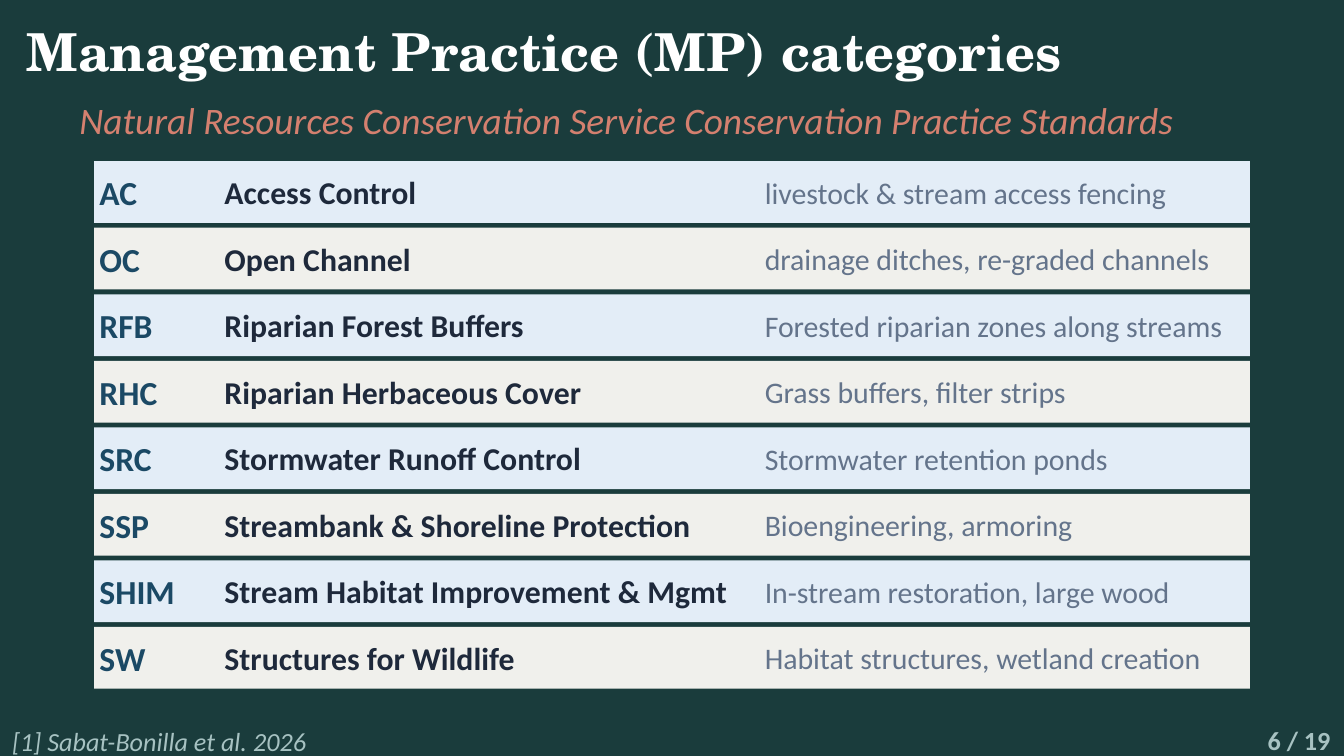
"""Build the slide that lists the management practice categories."""
from typing import NamedTuple

from pptx import Presentation
from pptx.dml.color import RGBColor
from pptx.enum.shapes import MSO_SHAPE
from pptx.enum.text import MSO_ANCHOR, PP_ALIGN
from pptx.util import Pt

RECTANGLE = MSO_SHAPE.RECTANGLE
MIDDLE = MSO_ANCHOR.MIDDLE
LEFT, RIGHT = PP_ALIGN.LEFT, PP_ALIGN.RIGHT

EMU_PER_PX = 4572
SLIDE_WIDTH, SLIDE_HEIGHT = 2000, 1125
ROW_LEFT, ROW_TOP, ROW_WIDTH, ROW_HEIGHT, ROW_PITCH = 140, 240, 1720, 92, 99

COLORS = {
    "background": "1A3C3C",
    "title": "FFFFFF",
    "subtitle": "D4806F",
    "footer": "A7C2C2",
    "row_blue": "E3EDF7",
    "row_grey": "F0F0EC",
    "code": "1B4965",
    "name": "1E293B",
    "example": "64748B",
}


class Box(NamedTuple):
    left: int
    top: int
    width: int
    height: int


class Column(NamedTuple):
    left: int
    width: int
    size: int
    color: str
    bold: bool


class Category(NamedTuple):
    code: str
    name: str
    example: str


COLUMNS = [
    Column(148, 164, 18, "code", True),
    Column(334, 784, 17, "name", True),
    Column(1138, 722, 16, "example", False),
]

CATEGORIES = [
    Category("AC", "Access Control", "livestock & stream access fencing"),
    Category("OC", "Open Channel", "drainage ditches, re-graded channels"),
    Category("RFB", "Riparian Forest Buffers", "Forested riparian zones along streams"),
    Category("RHC", "Riparian Herbaceous Cover", "Grass buffers, filter strips"),
    Category("SRC", "Stormwater Runoff Control", "Stormwater retention ponds"),
    Category("SSP", "Streambank & Shoreline Protection", "Bioengineering, armoring"),
    Category("SHIM", "Stream Habitat Improvement & Mgmt", "In-stream restoration, large wood"),
    Category("SW", "Structures for Wildlife", "Habitat structures, wetland creation"),
]


def px(length: int) -> int:
    """Turn px into EMU."""
    return length * EMU_PER_PX


def rgb(name: str) -> RGBColor:
    """Look up a named colour."""
    return RGBColor.from_string(COLORS[name])


def add_text(shapes, box: Box, text: str, *, size: int, color: str,
             font: str = "Calibri", bold: bool = False, italic: bool = False,
             align: PP_ALIGN = LEFT, line_spacing: float = 1.0) -> None:
    """Add a vertically centred text box without margins."""
    frame = shapes.add_textbox(*map(px, box)).text_frame
    frame.word_wrap = True
    frame.vertical_anchor = MIDDLE
    frame.margin_left = frame.margin_top = frame.margin_right = frame.margin_bottom = 0
    paragraph = frame.paragraphs[0]
    paragraph.alignment = align
    paragraph.line_spacing = line_spacing
    run = paragraph.add_run()
    run.text = text
    run.font.name = font
    run.font.size = Pt(size)
    run.font.bold = bold
    run.font.italic = italic
    run.font.color.rgb = rgb(color)


def add_category(shapes, index: int, category: Category) -> None:
    """Draw one striped row with its three texts."""
    top = ROW_TOP + index * ROW_PITCH
    band = shapes.add_shape(RECTANGLE, *map(px, Box(ROW_LEFT, top, ROW_WIDTH, ROW_HEIGHT)))
    band.shadow.inherit = False
    band.fill.solid()
    band.fill.fore_color.rgb = rgb("row_grey" if index % 2 else "row_blue")
    band.line.fill.background()
    for column, text in zip(COLUMNS, category):
        add_text(shapes, Box(column.left, top, column.width, ROW_HEIGHT), text,
                 size=column.size, color=column.color, bold=column.bold)


def main() -> None:
    """Build and save the presentation."""
    presentation = Presentation()
    presentation.slide_width = px(SLIDE_WIDTH)
    presentation.slide_height = px(SLIDE_HEIGHT)
    slide = presentation.slides.add_slide(presentation.slide_layouts[6])
    slide.background.fill.solid()
    slide.background.fill.fore_color.rgb = rgb("background")

    add_text(slide.shapes, Box(40, 16, 1720, 120), "Management Practice (MP) categories",
             size=28, color="title", font="TeX Gyre Schola", bold=True)
    for index, category in enumerate(CATEGORIES):
        add_category(slide.shapes, index, category)
    add_text(slide.shapes, Box(118, 138, 1632, 80),
             "Natural Resources Conservation Service Conservation Practice Standards",
             size=20, color="subtitle", italic=True)

    footer = slide.shapes.add_group_shape().shapes
    add_text(footer, Box(18, 1070, 1716, 64), "[1] Sabat-Bonilla et al. 2026",
             size=14, color="footer", italic=True, line_spacing=1.05)
    add_text(footer, Box(1814, 1078, 166, 48), "6 / 19",
             size=14, color="footer", bold=True, align=RIGHT)

    presentation.save("out.pptx")


if __name__ == "__main__":
    main()
